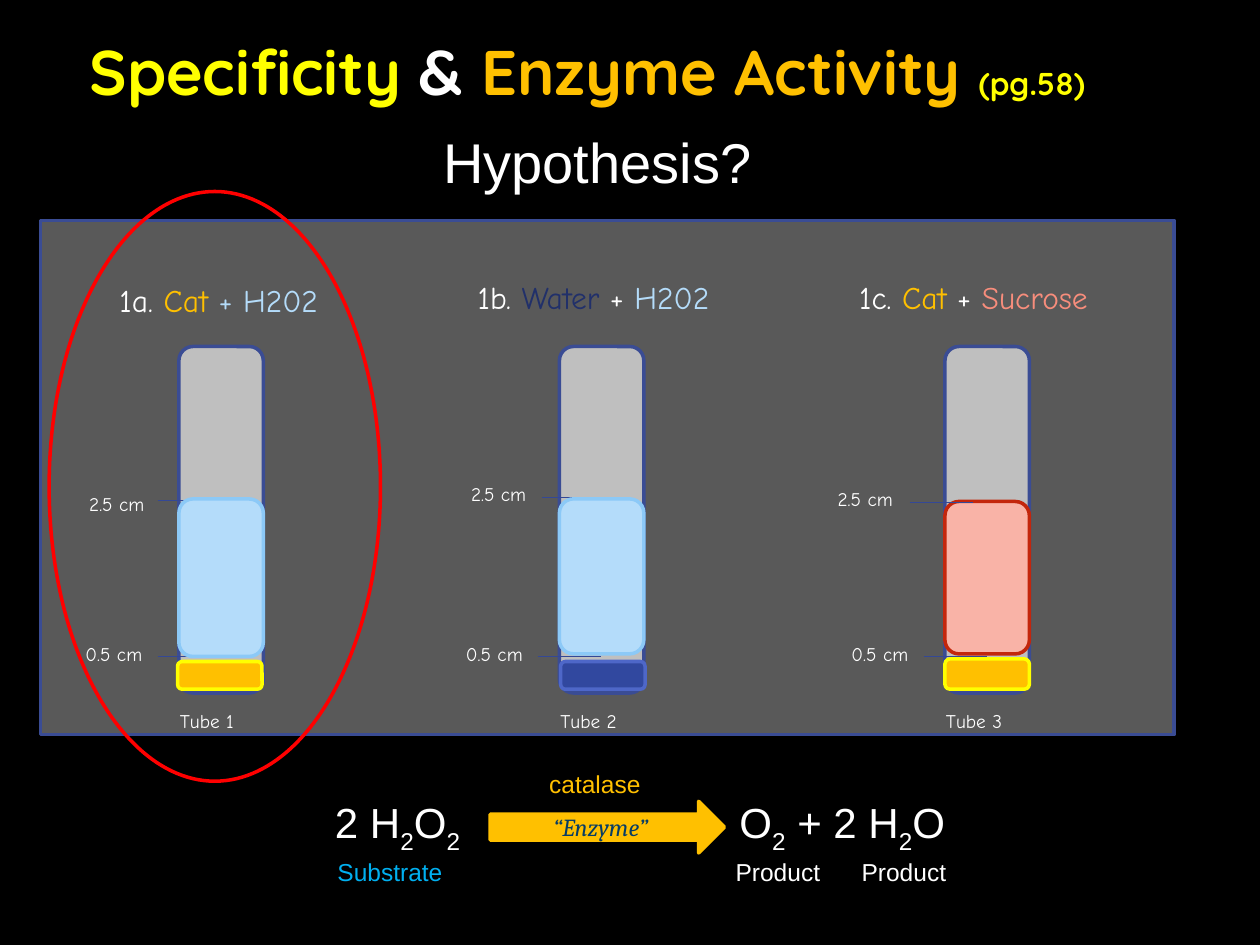
from dataclasses import dataclass

from lxml.etree import SubElement
from pptx import Presentation
from pptx.dml.color import RGBColor
from pptx.enum.shapes import MSO_CONNECTOR, MSO_SHAPE
from pptx.enum.text import MSO_ANCHOR, MSO_AUTO_SIZE, PP_ALIGN
from pptx.oxml.ns import qn
from pptx.util import Inches, Pt

COLUMNS, ROWS = 100, 75
WHITE, YELLOW, AMBER = "FFFFFF", "FFFF00", "FFC000"
GLASS_EDGE, TICK, PEROXIDE = "3A4C94", "344896", "B4DCFA"
TUBE_WIDTH = 6.7

Box = tuple[float, float, float, float]  # left, top, width, height in grid cells

prs = Presentation()
prs.slide_width, prs.slide_height = Inches(10), Inches(7.5)
slide = prs.slides.add_slide(prs.slide_layouts[5])
slide.background.fill.solid()
slide.background.fill.fore_color.rgb = RGBColor.from_string("000000")


@dataclass
class Run:
    text: str
    color: str = WHITE
    size: float | None = None
    subscript: bool = False


@dataclass
class Layer:
    """A filled part of a tube."""
    box: Box
    fill: str
    edge: str


@dataclass
class Tube:
    left: float
    caption: str
    heading: list[Run]
    heading_box: Box
    heading_align: PP_ALIGN
    upper_tick: tuple[float, float]
    upper_label: tuple[float, float]
    liquid: Layer
    enzyme: Layer
    tick_in_front: bool = False


def across(columns: float) -> int:
    return int(prs.slide_width * columns / COLUMNS)


def down(rows: float) -> int:
    return int(prs.slide_height * rows / ROWS)


def cells(box: Box) -> tuple[int, int, int, int]:
    left, top, width, height = box
    return across(left), down(top), across(width), down(height)


def paint(target, color: str) -> None:
    target.solid()
    target.fore_color.rgb = RGBColor.from_string(color)


def write(frame, runs: list[Run], *, size: float, font: str = "Arial",
          align: PP_ALIGN = PP_ALIGN.LEFT, bold: bool = False,
          italic: bool = False, wrap: bool = True) -> None:
    frame.word_wrap = wrap
    paragraph = frame.paragraphs[0]
    paragraph.alignment = align
    for part in runs:
        run = paragraph.add_run()
        run.text = part.text
        run.font.name, run.font.size = font, Pt(part.size or size)
        run.font.bold, run.font.italic = bold, italic
        paint(run.font.fill, part.color)
        if part.subscript:
            run.font._element.set("baseline", "-30000")


def add_text(box: Box, runs: list[Run], **text_format) -> None:
    frame = slide.shapes.add_textbox(*cells(box)).text_frame
    write(frame, runs, **text_format)
    frame.auto_size = MSO_AUTO_SIZE.SHAPE_TO_FIT_TEXT


def add_figure(kind: MSO_SHAPE, box: Box, fill: str | None, edge: str):
    figure = slide.shapes.add_shape(kind, *cells(box))
    figure.shadow.inherit = False
    if fill:
        paint(figure.fill, fill)
    else:
        figure.fill.background()
    paint(figure.line.fill, edge)
    figure.line.width = Pt(2)
    return figure


def add_tick(left: float, top: float) -> None:
    tick = slide.shapes.add_connector(MSO_CONNECTOR.STRAIGHT, across(left), down(top),
                                      across(left + 5), down(top))
    paint(tick.line.fill, TICK)
    tick.line.width = Pt(0.75)
    SubElement(tick._element.spPr, qn("a:effectLst"))


def add_label(left: float, top: float, label: str) -> None:
    add_text((left, top, 6.7, 2.9), [Run(label)], size=11, font="Comic Neue", wrap=False)


def add_tube(tube: Tube) -> None:
    add_text(tube.heading_box, tube.heading, size=18, font="Comic Neue",
             align=tube.heading_align)
    add_figure(MSO_SHAPE.ROUNDED_RECTANGLE, (tube.left, 27.5, TUBE_WIDTH, 27.5),
               "BFBFBF", GLASS_EDGE)
    add_tick(tube.left - 1.7, 52.1)
    add_label(tube.left - 8.4, 50.5, "0.5 cm")
    add_label(*tube.upper_label, "2.5 cm")
    add_label(tube.left - 0.9, 55.8, tube.caption)
    if not tube.tick_in_front:
        add_tick(*tube.upper_tick)
    for layer in (tube.liquid, tube.enzyme):
        add_figure(MSO_SHAPE.ROUNDED_RECTANGLE, layer.box, layer.fill, layer.edge)
    if tube.tick_in_front:
        add_tick(*tube.upper_tick)


TUBES = [
    Tube(14.2, "Tube 1",
         [Run("1a. "), Run("Cat ", AMBER), Run("+ H202", PEROXIDE)],
         (8.5, 21.8, 25, 4), PP_ALIGN.LEFT, (12.5, 39.7), (6.1, 38.6),
         Layer((14.2, 39.6, TUBE_WIDTH, 12.5), PEROXIDE, "8CC9F7"),
         Layer((14.1, 52.5, TUBE_WIDTH, 2.2), AMBER, YELLOW)),
    Tube(44.4, "Tube 2",
         [Run("1b."), Run(" Water ", "21306A"), Run("+ "), Run("H202", PEROXIDE)],
         (34.4, 21.6, 25.4, 4), PP_ALIGN.CENTER, (43, 39.5), (36.4, 37.8),
         Layer((44.4, 39.6, TUBE_WIDTH, 12.3), PEROXIDE, "8CC9F7"),
         Layer((44.5, 52.5, TUBE_WIDTH, 2.2), "31489F", "4E67C8")),
    Tube(75, "Tube 3",
         [Run("1c. "), Run("Cat", AMBER), Run(" + "), Run("Sucrose", "F78D7C")],
         (64.4, 21.6, 25.7, 4), PP_ALIGN.CENTER, (72.2, 39.9), (65.5, 38.2),
         Layer((75, 39.8, TUBE_WIDTH, 12.1), "F9B3A7", "C3260C"),
         Layer((75, 52.3, TUBE_WIDTH, 2.4), AMBER, YELLOW), tick_in_front=True),
]

title = slide.shapes.title
title.left, title.top, title.width, title.height = cells((6.1, 0.4, 94.4, 10.3))
write(title.text_frame,
      [Run("Specificity ", YELLOW), Run("& "), Run("Enzyme Activity ", AMBER),
       Run("(pg.58)", YELLOW, size=18)],
      size=36, font="Quicksand", bold=True)
title.text_frame.vertical_anchor = MSO_ANCHOR.MIDDLE
title.text_frame.auto_size = MSO_AUTO_SIZE.NONE

add_figure(MSO_SHAPE.RECTANGLE, (3.2, 17.5, 90, 40.8), "595959", GLASS_EDGE)
for test_tube in TUBES:
    add_tube(test_tube)

SUB_2 = Run("2", subscript=True)
add_text((25.6, 62.7, 13, 5), [Run("2 H"), SUB_2, Run("O"), SUB_2], size=24)
add_text((57.7, 62.7, 20, 5),
         [Run("O"), SUB_2, Run(" + 2 H"), SUB_2, Run("O")], size=24)
for left, top, role, color in [(42.6, 60.5, "catalase", AMBER),
                               (25.8, 67.5, "Substrate", "00B0F0"),
                               (57.4, 67.5, "Product", WHITE),
                               (67.4, 67.5, "Product", WHITE)]:
    add_text((left, top, 11, 3.1), [Run(role, color)], size=14)

reaction = add_figure(MSO_SHAPE.RIGHT_ARROW, (38.9, 63.6, 18.6, 4.1), AMBER, AMBER)
write(reaction.text_frame, [Run("“Enzyme”", "073C65")], size=14, font="Cambria",
      align=PP_ALIGN.CENTER, italic=True)
reaction.text_frame.vertical_anchor = MSO_ANCHOR.MIDDLE

add_text((34.2, 9.6, 26.7, 6.4), [Run("Hypothesis?")], size=32, wrap=False)
add_figure(MSO_SHAPE.OVAL, (3.9, 15.2, 26.3, 46.8), None, "FF0000")

prs.save("out.pptx")
